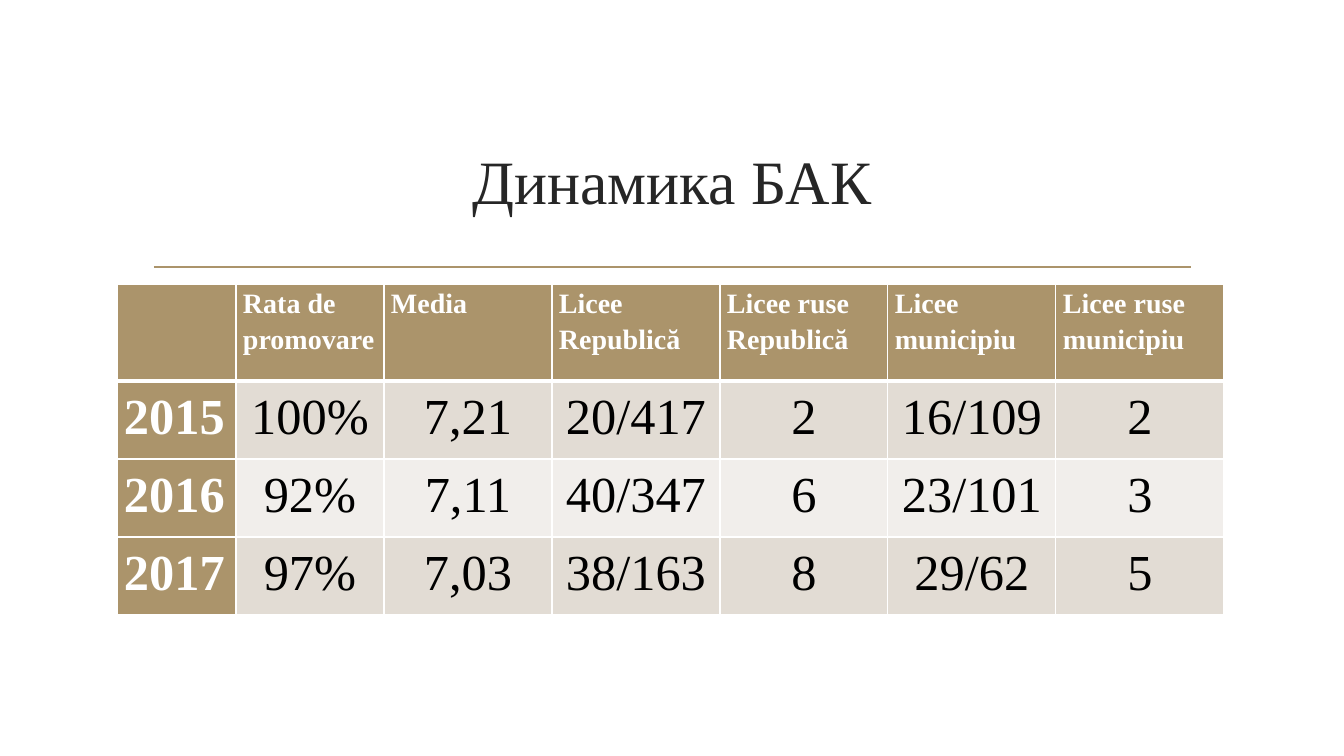
from lxml.etree import SubElement as Sub
from pptx import Presentation
from pptx.dml.color import RGBColor
from pptx.enum.shapes import MSO_CONNECTOR as Conn
from pptx.enum.text import MSO_ANCHOR as Anchor, PP_ALIGN as Align
from pptx.oxml.ns import qn
from pptx.util import Pt

PX = 914400 / 100.8
FONT = "Times New Roman"
GOLD = RGBColor(0xAB, 0x94, 0x6B)
SAND = RGBColor(0xE2, 0xDC, 0xD4)
PALE = RGBColor(0xF1, 0xEE, 0xEB)
WHITE = RGBColor(0xFF, 0xFF, 0xFF)
BLACK = RGBColor(0, 0, 0)
DARK = RGBColor(0x26, 0x26, 0x26)

HEAD = {"size": Pt(20), "bold": True, "color": WHITE}
YEAR = {"size": Pt(36), "bold": True, "color": WHITE}
DATA = {"size": Pt(36), "bold": False, "color": BLACK}
TITLE = {"size": Pt(44), "bold": False, "color": DARK}

COLS = [119, 148] + [168] * 5
ROWS = [97] + [78] * 3
CELLS = [
    ["", "Rata de promovare", "Media", "Licee Republică",
     "Licee ruse Republică", "Licee municipiu", "Licee ruse municipiu"],
    ["2015", "100%", "7,21", "20/417", "2", "16/109", "2"],
    ["2016", "92%", "7,11", "40/347", "6", "23/101", "3"],
    ["2017", "97%", "7,03", "38/163", "8", "29/62", "5"],
]


def px(n):
    return round(n * PX)


def write(frame, text, form, align):
    para = frame.paragraphs[0]
    para.alignment = align
    run = para.add_run()
    run.text = text
    run.font.name = FONT
    for key, val in form.items():
        if key == "color":
            run.font.color.rgb = val
        else:
            setattr(run.font, key, val)
    return para


def title(slide, box, text):
    shape = slide.shapes.add_textbox(*map(px, box))
    frame = shape.text_frame
    frame.word_wrap = True
    frame.vertical_anchor = Anchor.MIDDLE
    write(frame, text, TITLE, Align.CENTER)


def rule(slide, box):
    x, y, wide, high = box
    line = slide.shapes.add_connector(
        Conn.STRAIGHT, px(x), px(y), px(x + wide), px(y + high))
    line.line.color.rgb = GOLD
    line.line.width = Pt(1.25)
    Sub(line._element.spPr, qn("a:effectLst"))


def edge(cell, row):
    props = cell._tc.get_or_add_tcPr()
    wide = {"L": 1, "R": 1, "T": 3 if row == 1 else 1, "B": 3 if row == 0 else 1}
    for side, size in wide.items():
        line = Sub(props, qn("a:ln" + side), w=str(Pt(size)))
        fill = Sub(line, qn("a:solidFill"))
        Sub(fill, qn("a:srgbClr"), val=str(WHITE))


def grid(slide, box):
    frame = slide.shapes.add_table(len(ROWS), len(COLS), *map(px, box))
    table = frame.table
    table.first_col = True
    for col, wide in zip(table.columns, COLS):
        col.width = px(wide)
    for row, high in zip(table.rows, ROWS):
        row.height = px(high)
    gaps = {"margin_left": px(7), "margin_right": px(7),
            "margin_top": 0, "margin_bottom": 0}
    for r, words in enumerate(CELLS):
        for c, text in enumerate(words):
            cell = table.cell(r, c)
            for key, val in gaps.items():
                setattr(cell, key, val)
            edge(cell, r)
            form = HEAD if r == 0 else YEAR if c == 0 else DATA
            band = SAND if r % 2 else PALE
            cell.fill.solid()
            cell.fill.fore_color.rgb = band if form is DATA else GOLD
            if text:
                align = Align.CENTER if form is DATA else Align.LEFT
                para = write(cell.text_frame, text, form, align)
                para.line_spacing = 1.15


def main():
    deck = Presentation()
    deck.slide_width = px(1344)
    deck.slide_height = px(756)
    slide = deck.slides.add_slide(deck.slide_layouts[6])
    rule(slide, (154, 267, 1037, 0))
    title(slide, (143, 108, 1058, 144), "Динамика БАК")
    grid(slide, (117, 284, sum(COLS), sum(ROWS)))
    deck.save("out.pptx")


if __name__ == "__main__":
    main()
